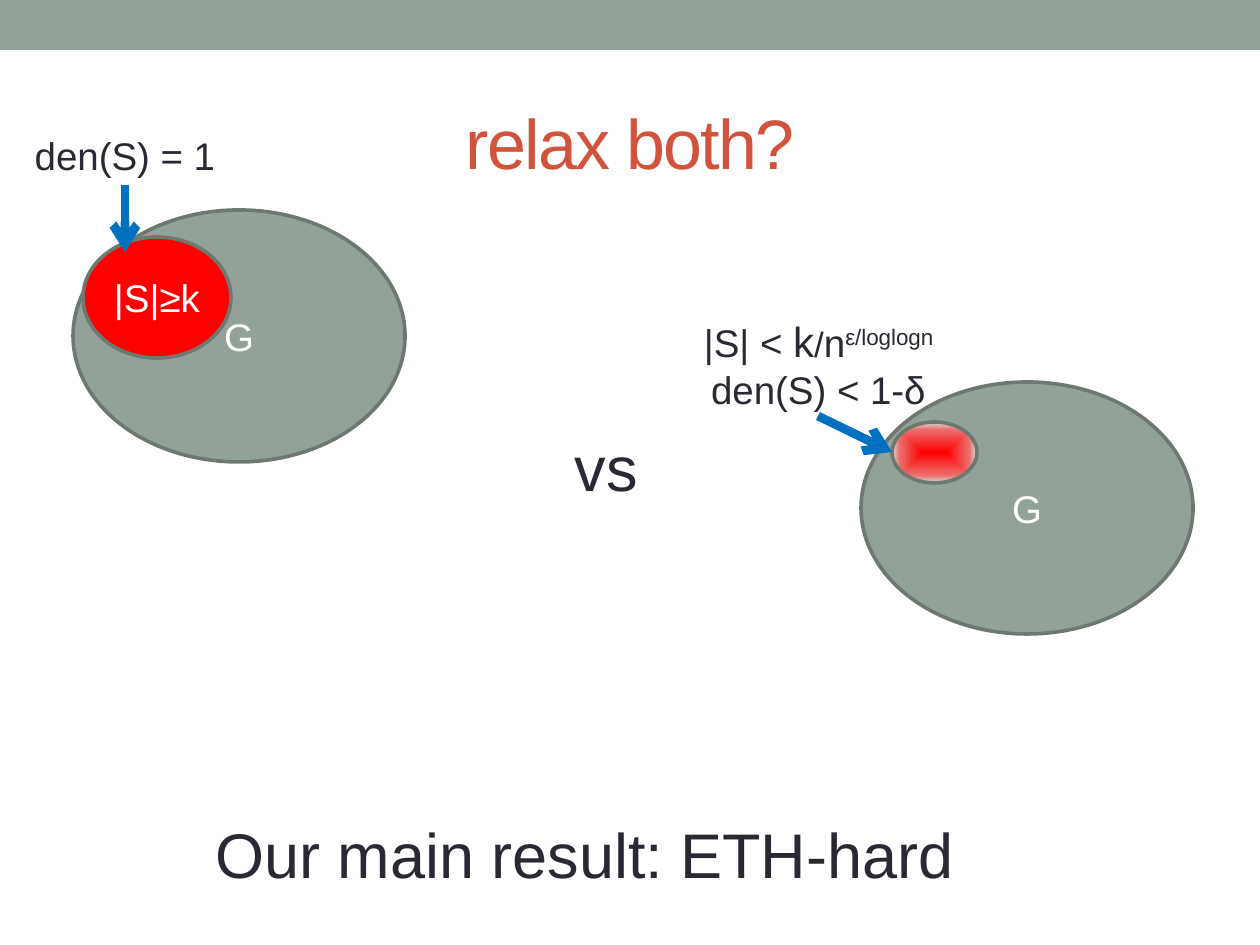
from dataclasses import dataclass
from pptx import Presentation
from pptx.dml.color import RGBColor
from pptx.enum.shapes import MSO_CONNECTOR, MSO_SHAPE
from pptx.enum.text import MSO_ANCHOR, MSO_AUTO_SIZE, PP_ALIGN
from pptx.oxml import parse_xml
from pptx.oxml.ns import nsdecls
from pptx.util import Pt


@dataclass(frozen=True)
class Theme:
    font: str = "Arial"
    sage: str = "93A299"
    outline: str = "6D7871"
    red: str = "FF0000"
    accent: str = "D2533C"
    ink: str = "292934"
    white: str = "FFFFFF"
    arrow: str = "0070C0"
    title: int = 40
    big: int = 36
    body: int = 22
    edge: float = 2.08
    shaft: int = 5


T = Theme()
EMU_PER_PX = 914400 / 126
GRAPH_SIZE = (332, 252)

BAR = (0, 0, 1260, 50)
TITLE = ("relax both?", (63, 73, 1134, 136))
GRAPHS = [("G", (73, 210)), ("G", (861, 382))]
DENSE_SET = ("|S|≥k", (83, 237, 148, 121))
SMALL_SET = (892, 422, 85, 61)
SMALL_SET_STOPS = [(0, T.red), (75, "EB6F6D"), (100, "D6DDD9"), (100, "EBEEEC")]
HEADLINES = [("Our main result: ETH-hard", (199, 809, 771, 89)),
             ("vs", (562, 422, 89, 89))]
DENSITY = ("den(S) = 1", (21, 126, 208, 59))
RELAXED = ([[("|S| < ", 22, 0), ("k", 24, 0), ("/", 20, 0), ("n", 22, 0),
             ("ε/loglogn", 22, 30)],
            [("den(S) < 1-δ", 22, 0)]], (683, 309, 271, 111))
ARROWS = [((125, 185), (125, 252)), ((818, 416), (892, 452))]


def px(*values):
    return [round(v * EMU_PER_PX) for v in values]


def rgb(value):
    return RGBColor.from_string(value)


def write(s, text, size=T.body, color=T.ink, wrap=False, grow=False,
          anchor=MSO_ANCHOR.TOP, spacing=0):
    tf = s.text_frame
    tf.word_wrap = wrap
    tf.auto_size = MSO_AUTO_SIZE.SHAPE_TO_FIT_TEXT if grow else MSO_AUTO_SIZE.NONE
    tf.vertical_anchor = anchor
    lines = [[(text, size, 0)]] if isinstance(text, str) else text
    for i, line in enumerate(lines):
        p = tf.add_paragraph() if i else tf.paragraphs[0]
        p.alignment = PP_ALIGN.CENTER
        for words, pts, raised in line:
            r = p.add_run()
            r.text = words
            r.font.name = T.font
            r.font.size = Pt(pts)
            r.font.color.rgb = rgb(color)
            if raised:
                r.font._element.set("baseline", str(raised * 1000))
            if spacing:
                r.font._element.set("spc", str(spacing * 100))


def add_text(slide, text, box, **fmt):
    s = slide.shapes.add_textbox(*px(*box))
    write(s, text, **fmt)


def add_figure(slide, kind, box, fill, line=None):
    s = slide.shapes.add_shape(kind, *px(*box))
    s.shadow.inherit = False
    s.fill.solid()
    s.fill.fore_color.rgb = rgb(fill)
    if line:
        s.line.color.rgb = rgb(line)
        s.line.width = Pt(T.edge)
    else:
        s.line.fill.background()
    return s


def add_ellipse(slide, box, fill, text="", wrap=True):
    s = add_figure(slide, MSO_SHAPE.OVAL, box, fill, T.outline)
    if text:
        write(s, text, color=T.white, wrap=wrap, anchor=MSO_ANCHOR.MIDDLE)
    return s


def set_centre_gradient(s, stops):
    marks = "".join(f'<a:gs pos="{pos * 1000}"><a:srgbClr val="{color}"/></a:gs>'
                    for pos, color in stops)
    grad = parse_xml(
        f'<a:gradFill {nsdecls("a")} rotWithShape="1"><a:gsLst>{marks}</a:gsLst>'
        '<a:path path="rect"><a:fillToRect l="50000" t="50000" r="50000" b="50000"/>'
        '</a:path></a:gradFill>')
    sp_pr = s._element.spPr
    sp_pr.replace(sp_pr.solidFill, grad)


def add_arrow(slide, start, end):
    s = slide.shapes.add_connector(MSO_CONNECTOR.STRAIGHT, *px(*start, *end))
    s.line.color.rgb = rgb(T.arrow)
    s.line.width = Pt(T.shaft)
    s.line._get_or_add_ln().append(parse_xml(f'<a:tailEnd {nsdecls("a")} type="arrow"/>'))
    s._element.spPr.append(parse_xml(f'<a:effectLst {nsdecls("a")}/>'))


def main():
    prs = Presentation()
    prs.slide_width, prs.slide_height = px(1260, 945)
    slide = prs.slides.add_slide(prs.slide_layouts[6])

    add_figure(slide, MSO_SHAPE.RECTANGLE, BAR, T.sage)
    add_text(slide, *TITLE, size=T.title, color=T.accent, wrap=True,
             anchor=MSO_ANCHOR.MIDDLE, spacing=-1)
    for label, corner in GRAPHS:
        add_ellipse(slide, corner + GRAPH_SIZE, T.sage, label)
    label, box = DENSE_SET
    add_ellipse(slide, box, T.red, label, wrap=False)
    set_centre_gradient(add_ellipse(slide, SMALL_SET, T.red), SMALL_SET_STOPS)
    for text, box in HEADLINES:
        add_text(slide, text, box, size=T.big, grow=True)
    for text, box in (DENSITY, RELAXED):
        add_text(slide, text, box, grow=True)
    for start, end in ARROWS:
        add_arrow(slide, start, end)

    prs.save("out.pptx")


if __name__ == "__main__":
    main()
